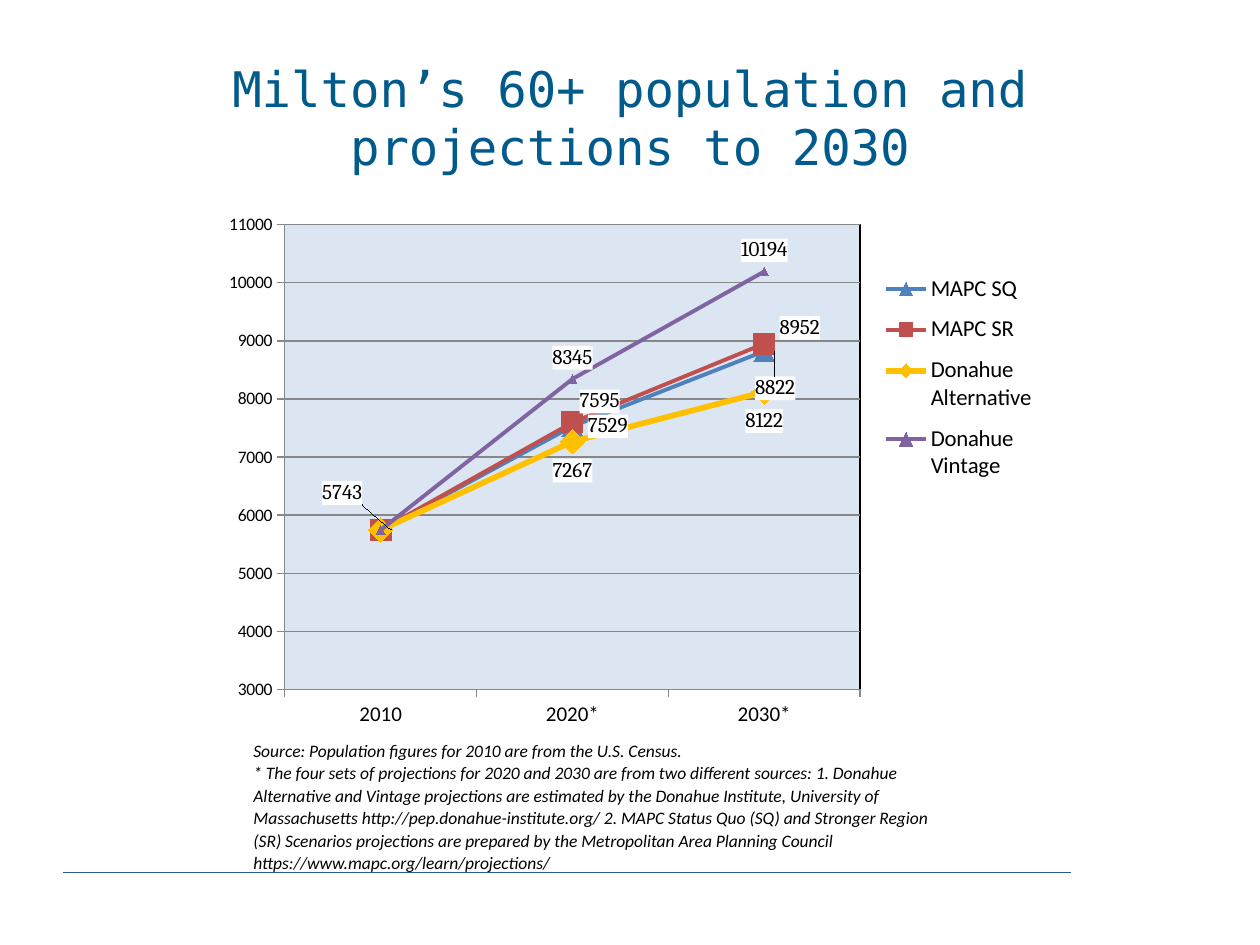
from dataclasses import dataclass

from lxml.etree import SubElement
from pptx import Presentation
from pptx.chart.data import CategoryChartData
from pptx.dml.color import RGBColor
from pptx.enum.chart import XL_CHART_TYPE, XL_LEGEND_POSITION, XL_MARKER_STYLE, XL_TICK_MARK
from pptx.enum.shapes import MSO_CONNECTOR
from pptx.enum.text import MSO_ANCHOR, MSO_AUTO_SIZE, PP_ALIGN
from pptx.oxml import parse_xml
from pptx.oxml.ns import nsdecls, qn
from pptx.util import Pt


@dataclass(frozen=True)
class Theme:
    title: str = "005A8B"
    text: str = "000000"
    rule: str = "2D588D"
    grid: str = "878787"
    plot: str = "DCE6F2"
    label_fill: str = "FFFFFF"
    title_font: str = "DejaVu Sans Mono"
    body_font: str = "Calibri"
    label_font: str = "Cambria"
    title_size: int = 28
    small_size: int = 10
    label_size: int = 12
    legend_size: int = 13


THEME = Theme()
CATEGORIES = ["2010", "2020*", "2030*"]
# name, values, colour, line width, marker, marker size,
# labels as {point: (position, x shift, y shift)}; other points have none
SERIES = [
    ("MAPC SQ", (5743, 7529, 8822), "4F81BD", 2.25, XL_MARKER_STYLE.TRIANGLE, 12,
     {1: ("r", 0, 0), 2: ("r", -0.03, 0.07)}),
    ("MAPC SR", (5743, 7595, 8952), "C0504D", 2.25, XL_MARKER_STYLE.SQUARE, 12,
     {0: ("r", -0.09, -0.07), 1: ("r", -0.01, -0.04), 2: ("r", 0, -0.03)}),
    ("Donahue Alternative", (5743, 7267, 8122), "FFC000", 3.25, XL_MARKER_STYLE.DIAMOND, 14,
     {1: ("b", 0, 0), 2: ("b", 0, 0)}),
    ("Donahue Vintage", (5743, 8345, 10194), "8064A2", 2.25, XL_MARKER_STYLE.TRIANGLE, 5,
     {1: ("t", 0, 0), 2: ("t", 0, 0)}),
]
NOTES = [
    "Source: Population figures for 2010 are from the U.S. Census.",
    "* The four sets of projections for 2020 and 2030 are from two different sources: "
    "1. Donahue Alternative and Vintage projections are estimated by the Donahue Institute, "
    "University of Massachusetts http://pep.donahue-institute.org/ "
    "2. MAPC Status Quo (SQ) and Stronger Region (SR) Scenarios projections are prepared by "
    "the Metropolitan Area Planning Council https://www.mapc.org/learn/projections/",
]


def px(n):
    return int(n * 914400 / 126)


def rgb(color):
    return RGBColor.from_string(color)


def set_font(font, size, color=THEME.text, name=THEME.body_font, italic=False):
    font.size, font.name = Pt(size), name
    font.bold, font.italic = False, italic
    font.color.rgb = rgb(color)


def write(p, text, align=PP_ALIGN.LEFT, spacing=None, **font):
    p.alignment = align
    p.line_spacing = spacing
    r = p.add_run()
    r.text = text
    set_font(r.font, **font)


def place(sp, box):
    sp.left, sp.top, sp.width, sp.height = map(px, box)


def add_title(slide, box):
    sp = slide.shapes.title
    place(sp, box)
    tf = sp.text_frame
    tf.word_wrap = True
    tf.auto_size = MSO_AUTO_SIZE.NONE
    tf.vertical_anchor = MSO_ANCHOR.MIDDLE
    write(tf.paragraphs[0], "Milton’s 60+ population and projections to 2030",
          align=PP_ALIGN.CENTER, size=THEME.title_size, color=THEME.title,
          name=THEME.title_font)


def add_rule(slide, x, y, width):
    line = slide.shapes.add_connector(MSO_CONNECTOR.STRAIGHT, px(x), px(y), px(x + width), px(y))
    line.line.color.rgb = rgb(THEME.rule)
    line.line.width = Pt(0.5)
    SubElement(line._element.spPr, qn("a:effectLst"))


def add_notes_text(slide, box):
    tf = slide.shapes.add_textbox(*map(px, box)).text_frame
    tf.word_wrap = True
    tf.auto_size = MSO_AUTO_SIZE.SHAPE_TO_FIT_TEXT
    for i, text in enumerate(NOTES):
        p = tf.add_paragraph() if i else tf.paragraphs[0]
        write(p, text, spacing=1.07, size=THEME.small_size, italic=True)


def layout_xml(x, y, w=None, h=None, inner=False):
    """Manual layout: a shift when there is no size, otherwise a box."""
    target = '<c:layoutTarget val="inner"/>' if inner else ""
    modes = '<c:xMode val="edge"/><c:yMode val="edge"/>' if w else ""
    size = f'<c:w val="{w}"/><c:h val="{h}"/>' if w else ""
    return (f'<c:layout {nsdecls("c")}><c:manualLayout>{target}{modes}'
            f'<c:x val="{x}"/><c:y val="{y}"/>{size}</c:manualLayout></c:layout>')


def set_layout(element, index, *args, **kwargs):
    for old in element.findall(qn("c:layout")):
        element.remove(old)
    element.insert(index, parse_xml(layout_xml(*args, **kwargs)))


def label_format_xml(position):
    shows = "".join(f'<c:show{key} val="{int(key == "Val")}"/>' for key in
                    ("LegendKey", "Val", "CatName", "SerName", "Percent", "BubbleSize"))
    return (f'<c:numFmt formatCode="0" sourceLinked="0"/><c:spPr><a:solidFill>'
            f'<a:srgbClr val="{THEME.label_fill}"/></a:solidFill></c:spPr>'
            f'<c:txPr><a:bodyPr/><a:p><a:pPr><a:defRPr sz="{THEME.label_size * 100}" b="0">'
            f'<a:solidFill><a:srgbClr val="{THEME.text}"/></a:solidFill>'
            f'<a:latin typeface="{THEME.label_font}"/></a:defRPr></a:pPr>'
            f'<a:endParaRPr lang="en-US"/></a:p></c:txPr>'
            f'<c:dLblPos val="{position}"/>{shows}')


def set_labels(series, labels):
    points = ""
    for i in range(len(CATEGORIES)):
        body = '<c:delete val="1"/>'
        if i in labels:
            position, dx, dy = labels[i]
            body = (layout_xml(dx, dy) if dx or dy else "") + label_format_xml(position)
        points += f'<c:dLbl><c:idx val="{i}"/>{body}</c:dLbl>'
    position = labels[2][0]
    old = series.data_labels._element
    old.getparent().replace(old, parse_xml(
        f'<c:dLbls {nsdecls("c", "a")}>{points}{label_format_xml(position)}</c:dLbls>'))


def format_series(series, color, width, marker, marker_size, labels):
    series.smooth = False
    series.format.line.color.rgb = rgb(color)
    series.format.line.width = Pt(width)
    series.marker.style, series.marker.size = marker, marker_size
    series.marker.format.fill.solid()
    series.marker.format.fill.fore_color.rgb = rgb(color)
    series.marker.format.line.color.rgb = rgb(color)
    set_labels(series, labels)


def add_projection_chart(slide, box):
    data = CategoryChartData(number_format="0")
    data.categories = CATEGORIES
    for name, values, *_ in SERIES:
        data.add_series(name, values)
    chart = slide.shapes.add_chart(XL_CHART_TYPE.LINE_MARKERS, *map(px, box), data).chart
    chart.has_title = False
    set_font(chart.font, THEME.small_size)
    chart.plots[0].vary_by_categories = False

    # Axes
    axis = chart.value_axis
    axis.minimum_scale, axis.maximum_scale, axis.major_unit = 3000, 11000, 1000
    axis.has_major_gridlines = True
    axis.tick_labels.number_format = "0"
    axis.tick_labels.number_format_is_linked = False
    for ax, size in ((axis, THEME.small_size), (chart.category_axis, THEME.label_size)):
        ax.major_tick_mark = XL_TICK_MARK.OUTSIDE
        set_font(ax.tick_labels.font, size)
    for part in (axis, axis.major_gridlines, chart.category_axis):
        part.format.line.color.rgb = rgb(THEME.grid)
        part.format.line.width = Pt(0.75)

    # Legend
    chart.has_legend = True
    chart.legend.position = XL_LEGEND_POSITION.RIGHT
    chart.legend.include_in_layout = False
    set_font(chart.legend.font, THEME.legend_size)
    set_layout(chart.legend._element, 1, 0.8, 0.1, 0.2, 0.44)

    # Plot area
    area = chart._chartSpace.chart.plotArea
    set_layout(area, 0, 0.08, 0.03, 0.7, 0.88, inner=True)
    area.append(parse_xml(
        f'<c:spPr {nsdecls("c", "a")}><a:solidFill><a:srgbClr val="{THEME.plot}"/></a:solidFill>'
        f'<a:ln w="9525"><a:solidFill><a:srgbClr val="{THEME.text}"/></a:solidFill></a:ln></c:spPr>'))
    for series, (_, _, *style) in zip(chart.plots[0].series, SERIES):
        format_series(series, *style)


def main():
    prs = Presentation()
    prs.slide_width, prs.slide_height = px(1260), px(945)
    slide = prs.slides.add_slide(prs.slide_layouts[5])
    add_rule(slide, 63, 872, 1008)
    add_title(slide, (63, 38, 1134, 158))
    add_notes_text(slide, (241, 732, 726, 147))
    add_projection_chart(slide, (219, 209, 822, 528))
    prs.save("out.pptx")


if __name__ == "__main__":
    main()
